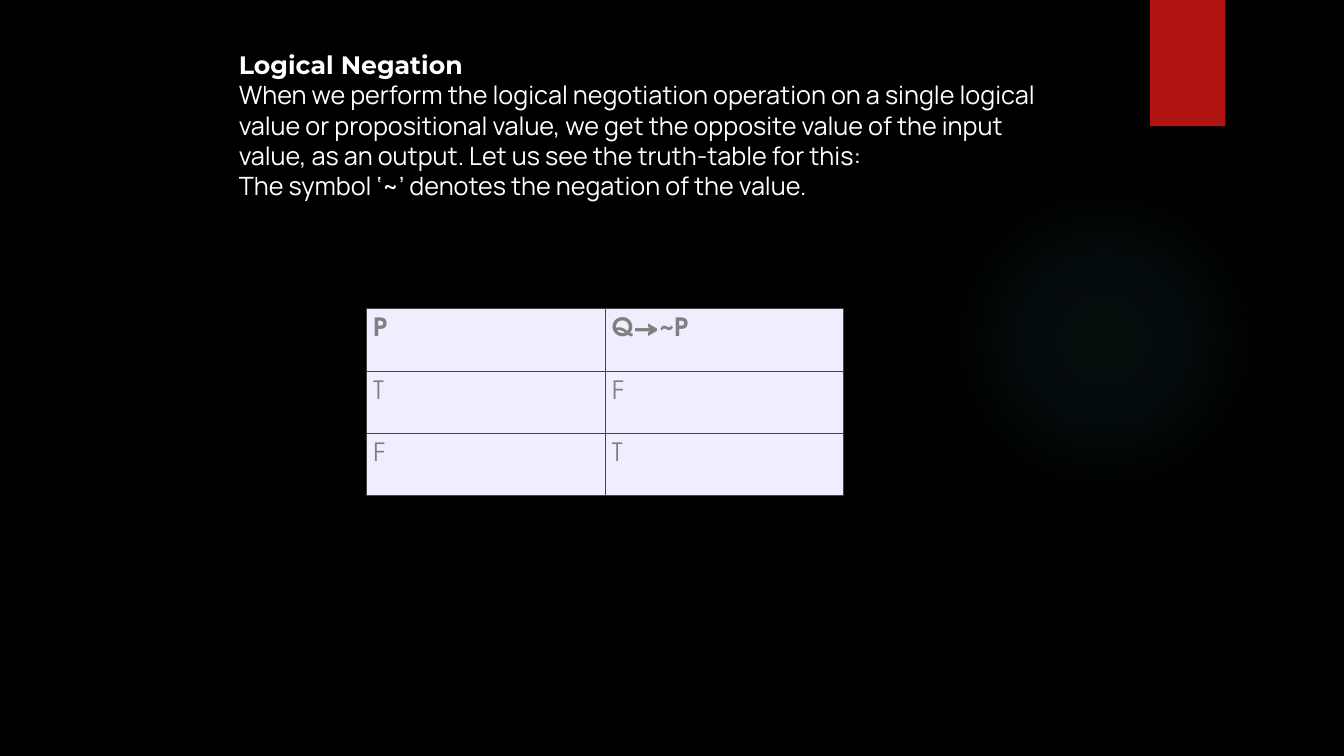
from dataclasses import dataclass

from lxml import etree
from pptx import Presentation
from pptx import util as u
from pptx.dml.color import RGBColor
from pptx.enum import shapes, text
from pptx.oxml import ns

Cm, Pt = u.Cm, u.Pt


@dataclass(frozen=True)
class Theme:
    """Colours, fonts and sizes of the slide."""
    back: str = "000000"
    glow: str = "50B9C1"
    tab: str = "B01513"
    ink: str = "FFFFFF"
    cell: str = "F1EDFF"
    mark: str = "808080"
    rule: str = "444444"
    head: str = "Montserrat"
    body: str = "Manrope"
    grid: str = "TeX Gyre Adventor"
    size: int = 18


LOOK = Theme()
INTRO = (
    "Logical Negation",
    "When we perform the logical negotiation operation on a single logical "
    "value or propositional value, we get the opposite value of the input "
    "value, as an output. Let us see the truth-table for this:",
    "The symbol ‘~’ denotes the negation of the value.",
)
TRUTH = (("P", "Q→~P"), ("T", "F"), ("F", "T"))


def rgb(code):
    """Turn a hex code into a colour."""
    return RGBColor.from_string(code)


def add(node, tag, **attrs):
    """Append a drawing element with the given attributes."""
    return etree.SubElement(node, ns.qn(tag), attrs)


def style(para, face, color, bold):
    """Set the font of a paragraph."""
    font = para.font
    font.name, font.size, font.bold = face, Pt(LOOK.size), bold
    font.color.rgb = rgb(color)


def plain(slide, kind, box):
    """Add a shape without line or shadow."""
    shape = slide.shapes.add_shape(kind, *map(Cm, box))
    shape.shadow.inherit = False
    shape.line.fill.background()
    return shape


def decor(slide, glow, tab):
    """Place the soft glow and the red tab."""
    disc = plain(slide, shapes.MSO_SHAPE.OVAL, glow)
    disc.fill.gradient()
    grad = disc.fill._xPr.find(ns.qn("a:gradFill"))
    for child in list(grad):
        grad.remove(child)
    stops = add(grad, "a:gsLst")
    for place, alpha in ((0, 7), (36, 6), (69, 0)):
        stop = add(stops, "a:gs", pos=str(place * 1000))
        color = add(stop, "a:srgbClr", val=LOOK.glow)
        add(color, "a:alpha", val=str(alpha * 1000))
    route = add(grad, "a:path", path="circle")
    add(route, "a:fillToRect", **dict.fromkeys("ltrb", "50000"))
    flag = plain(slide, shapes.MSO_SHAPE.RECTANGLE, tab)
    flag.fill.solid()
    flag.fill.fore_color.rgb = rgb(LOOK.tab)


def intro(slide, box):
    """Write the heading and the text below it."""
    frame = slide.shapes.add_textbox(*map(Cm, box)).text_frame
    frame.word_wrap = True
    frame.text = "\n".join(INTRO)
    for i, para in enumerate(frame.paragraphs):
        style(para, LOOK.body if i else LOOK.head, LOOK.ink, i == 0)


def edge(cell, base):
    """Draw the borders of a cell, with its own width at the base."""
    props = cell._tc.get_or_add_tcPr()
    for i, side in enumerate("LRTB"):
        width = base if side == "B" else 0.3
        line = etree.Element(ns.qn("a:ln" + side), w=str(Pt(width)))
        add(add(line, "a:solidFill"), "a:srgbClr", val=LOOK.rule)
        props.insert(i, line)


def truth(slide, box):
    """Build the truth table with equal rows and columns."""
    rows, cols = len(TRUTH), len(TRUTH[0])
    table = slide.shapes.add_table(rows, cols, *map(Cm, box)).table
    table.first_row = table.horz_banding = False
    for r, row in enumerate(TRUTH):
        for c, word in enumerate(row):
            cell = table.cell(r, c)
            cell.text = word
            cell.vertical_anchor = text.MSO_ANCHOR.TOP
            cell.margin_left = cell.margin_right = Cm(0.18)
            cell.margin_top = cell.margin_bottom = Cm(0.25)
            style(cell.text_frame.paragraphs[0], LOOK.grid, LOOK.mark, r == 0)
            cell.fill.solid()
            cell.fill.fore_color.rgb = rgb(LOOK.cell)
            edge(cell, 0.6 if r == rows - 1 else 0.3)


def main():
    """Build and save the slide."""
    deck = Presentation()
    deck.slide_width, deck.slide_height = Cm(33.87), Cm(19.05)
    slide = deck.slides.add_slide(deck.slide_layouts[6])
    fill = slide.background.fill
    fill.solid()
    fill.fore_color.rgb = rgb(LOOK.back)
    decor(slide, (23.9, 4.65, 7.82, 7.82), (28.98, 0, 1.9, 3.18))
    intro(slide, (5.77, 1.12, 21.23, 4.88))
    truth(slide, (9.22, 7.77, 12.04, 4.72))
    deck.save("out.pptx")


if __name__ == "__main__":
    main()
